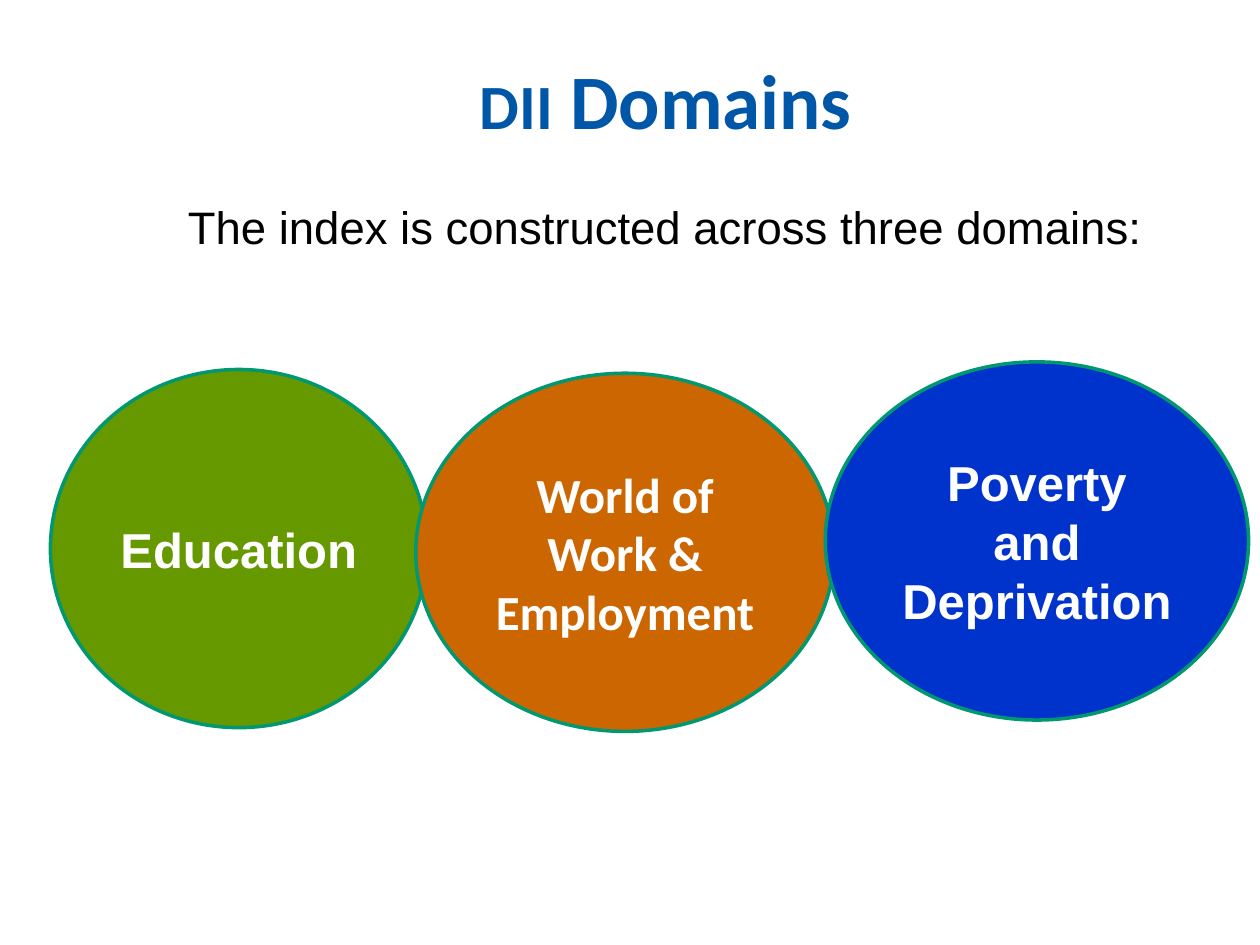
from dataclasses import dataclass

from lxml import etree
from pptx import Presentation
from pptx import util as u
from pptx.dml.color import RGBColor
from pptx.enum import shapes, text
from pptx.oxml.ns import qn


@dataclass(frozen=True)
class Theme:
    heading: str = "Calibri"
    body: str = "Arial"
    title: str = "0056A7"
    ink: str = "000000"
    light: str = "FFFFFF"
    outline: str = "009771"
    green: str = "669900"
    orange: str = "CC6600"
    blue: str = "0033CC"
    title_size: int = 44
    acronym_size: int = 36
    label_size: int = 28
    lead_size: int = 26


class Deck:
    """Holds the theme and current slide; boxes are shares of the slide size."""

    def __init__(self, theme):
        self.theme = theme
        self.prs = Presentation()
        self.prs.slide_width, self.prs.slide_height = u.Inches(10), u.Inches(7.5)
        self.s = self.prs.slides.add_slide(self.prs.slide_layouts[1])

    def area(self, x, y, w, h):
        width, height = self.prs.slide_width, self.prs.slide_height
        return int(x * width), int(y * height), int(w * width), int(h * height)

    def place(self, sp, box):
        sp.left, sp.top, sp.width, sp.height = self.area(*box)

    def set_text(self, sp, runs, font, color, bold):
        """Fill a shape with one centred paragraph of (words, size) runs."""
        tf = sp.text_frame
        tf.word_wrap = True
        tf.auto_size = text.MSO_AUTO_SIZE.NONE
        tf.vertical_anchor = text.MSO_ANCHOR.MIDDLE
        p = tf.paragraphs[0]
        p.alignment = text.PP_ALIGN.CENTER
        p.space_before = u.Pt(0)
        for words, size in runs:
            r = p.add_run()
            r.text = words
            r.font.name, r.font.size, r.font.bold = font, u.Pt(size), bold
            r.font.color.rgb = RGBColor.from_string(color)
        return p

    def title(self, runs, box):
        sp = self.s.shapes.title
        self.place(sp, box)
        self.set_text(sp, runs, self.theme.heading, self.theme.title, True)

    def lead(self, words, box):
        sp = self.s.placeholders[1]
        self.place(sp, box)
        p = self.set_text(sp, [(words, self.theme.lead_size)],
                          self.theme.body, self.theme.ink, False)
        # Plain sentence: no bullet and no hanging indent
        ppr = p._p.get_or_add_pPr()
        ppr.set("marL", "0")
        ppr.set("indent", "0")
        etree.SubElement(ppr, qn("a:buNone"))

    def domain(self, words, box, fill, font):
        sp = self.s.shapes.add_shape(shapes.MSO_SHAPE.OVAL, *self.area(*box))
        sp.shadow.inherit = False
        sp.fill.solid()
        sp.fill.fore_color.rgb = RGBColor.from_string(fill)
        sp.line.color.rgb = RGBColor.from_string(self.theme.outline)
        sp.line.width = u.Pt(2)
        self.set_text(sp, [(words, self.theme.label_size)],
                      font, self.theme.light, True)


def main():
    t = Theme()
    deck = Deck(t)

    # Heading and lead sentence
    deck.title([("DII", t.acronym_size), (" Domains", t.title_size)],
               (0.103, 0.048, 0.851, 0.112))
    deck.lead("The index is constructed across three domains:",
              (0.075, 0.201, 0.906, 0.076))

    # Overlapping domain ovals of equal height
    oval_height = 0.379
    domains = [
        ("Education", 0.04, 0.391, 0.299, t.green, t.body),
        ("World of Work & Employment", 0.33, 0.395, 0.332, t.orange, t.heading),
        ("Poverty and Deprivation", 0.655, 0.383, 0.336, t.blue, t.body),
    ]
    for words, x, y, w, fill, font in domains:
        deck.domain(words, (x, y, w, oval_height), fill, font)

    deck.prs.save("out.pptx")


if __name__ == "__main__":
    main()
